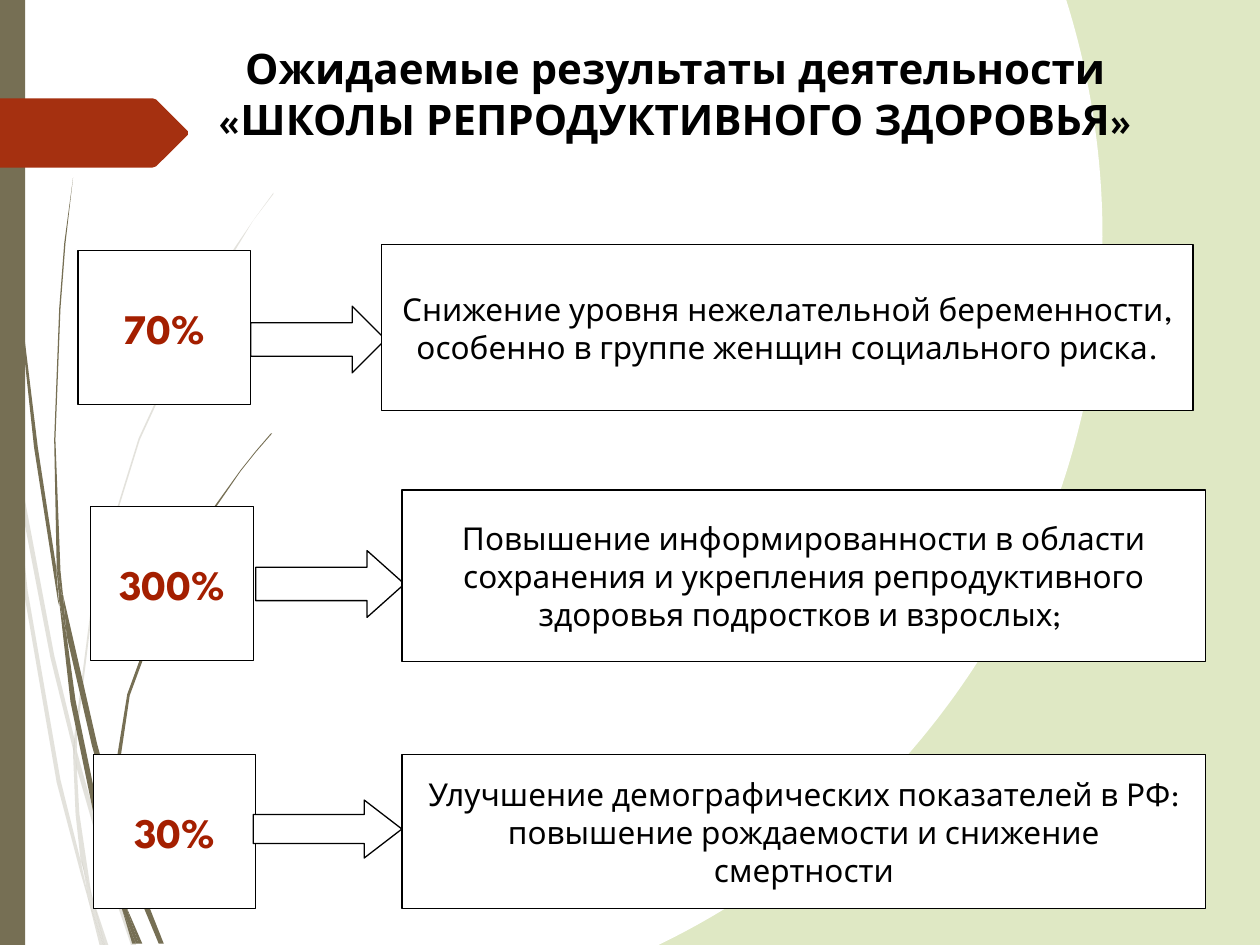
from lxml import etree
from pptx import Presentation
from pptx.dml.color import RGBColor
from pptx.enum.shapes import MSO_SHAPE
from pptx.enum.text import MSO_ANCHOR, PP_ALIGN
from pptx.oxml import parse_xml
from pptx.oxml.ns import nsdecls, qn
from pptx.util import Inches, Pt

RECTANGLE, ARROW = MSO_SHAPE.RECTANGLE, MSO_SHAPE.RIGHT_ARROW
CENTER, TOP, MIDDLE = PP_ALIGN.CENTER, MSO_ANCHOR.TOP, MSO_ANCHOR.MIDDLE
OLIVE = RGBColor(0x76, 0x6F, 0x54)
RUST = RGBColor(0xA5, 0x30, 0x10)
RED = RGBColor(0xA4, 0x1F, 0x00)
BLACK = RGBColor(0, 0, 0)
WHITE = RGBColor(0xFF, 0xFF, 0xFF)
FONT = "League Spartan"
HUNDREDTH = Inches(0.01)

# Outlines of the grass blades, in hundredths of an inch
PALE_BLADES = [
    [(8, 350), (6, 322), (0, 282), (0, 299), (7, 344)],
    [(40, 522), (59, 599), (59, 586), (43, 520), (10, 345), (12, 376)],
    [(64, 607), (61, 596), (61, 610), (85, 694), (104, 750), (108, 750), (88, 692)],
    [(83, 750), (86, 750), (73, 711)],
    [(64, 683), (48, 619), (22, 469), (12, 376), (8, 350), (19, 470), (45, 621),
     (64, 693), (70, 714), (69, 707)],
    [(58, 599), (60, 646), (64, 683), (67, 692), (73, 711), (72, 706), (63, 646),
     (61, 610), (61, 608)],
    [(61, 584), (76, 462), (111, 349), (159, 245), (187, 198), (201, 175), (217, 154),
     (217, 153), (201, 175), (186, 197), (158, 244), (110, 348), (75, 461), (59, 584),
     (59, 586), (61, 596)],
    [(70, 714), (79, 750), (82, 750)],
    [(61, 608), (61, 610), (61, 596), (59, 586), (58, 599)],
    [(67, 692), (65, 683), (69, 707), (70, 714), (82, 750), (83, 750), (73, 711)],
]
DARK_BLADES = [
    [(5, 110), (14, 233), (27, 355), (46, 477), (47, 481), (45, 457), (45, 453),
     (30, 355), (15, 232), (6, 109), (4, 48), (3, 0), (2, 0), (3, 48)],
    [(73, 592), (88, 645), (88, 633), (88, 631), (77, 590), (50, 472), (53, 505)],
    [(94, 649), (91, 641), (91, 656), (109, 708), (126, 749), (130, 749), (113, 706)],
    [(91, 691), (81, 657), (60, 556), (53, 505), (47, 477), (56, 557), (77, 659),
     (92, 708), (97, 722), (96, 717)],
    [(50, 472), (48, 453), (44, 349), (48, 245), (52, 193), (58, 141), (51, 193),
     (47, 245), (43, 349), (45, 449), (49, 472)],
    [(110, 749), (113, 749), (100, 719)],
    [(47, 477), (53, 505), (50, 472), (49, 472), (45, 449), (45, 453)],
    [(91, 633), (103, 552), (131, 476), (169, 406), (191, 374), (203, 359), (216, 344),
     (215, 344), (203, 358), (191, 373), (168, 405), (129, 474), (101, 551), (88, 631),
     (91, 641)],
    [(97, 722), (105, 749), (108, 749)],
    [(96, 706), (91, 691), (96, 717), (97, 722), (108, 749), (110, 749), (100, 719)],
]
TITLE_TAG = [(149, 107), (124, 132), (121, 133), (0, 133), (0, 78), (121, 78),
             (124, 79), (149, 104)]

# Each row: share, its box, arrow box and head length, outcome, its box (inches)
RESULTS = [
    ("70%", (0.62, 1.99, 1.37, 1.22), (1.99, 2.43, 1.07, 0.53), 0.5,
     "Снижение уровня нежелательной беременности, особенно в группе женщин "
     "социального риска.", (3.03, 1.94, 6.44, 1.32)),
    ("300%", (0.72, 4.02, 1.29, 1.22), (2.03, 4.37, 1.18, 0.53), 0.56,
     "Повышение информированности в области сохранения и укрепления "
     "репродуктивного здоровья подростков и взрослых; ", (3.19, 3.89, 6.38, 1.36)),
    ("30%", (0.74, 5.99, 1.29, 1.22), (2.01, 6.35, 1.18, 0.46), 0.65,
     "Улучшение демографических показателей в РФ: повышение рождаемости и "
     "снижение смертности", (3.19, 5.99, 6.38, 1.22)),
]


def add_outline(shapes, points, color):
    builder = shapes.build_freeform(*points[0], scale=HUNDREDTH)
    builder.add_line_segments(points[1:], close=True)
    outline = builder.convert_to_shape()
    outline.shadow.inherit = False
    outline.fill.solid()
    outline.fill.fore_color.rgb = color
    outline.line.fill.background()
    return outline


def write(frame, text, size, color, bold, anchor):
    frame.word_wrap = True
    frame.vertical_anchor = anchor
    paragraph = frame.paragraphs[0]
    paragraph.alignment = CENTER
    run = paragraph.add_run()
    run.text = text
    run.font.name = FONT
    run.font.size = Pt(size)
    run.font.bold = bold
    run.font.color.rgb = color


deck = Presentation()
deck.slide_width, deck.slide_height = Inches(10), Inches(7.5)
slide = deck.slides.add_slide(deck.slide_layouts[5])
shapes = slide.shapes

# Background: a hard-edged white circle on pale green
slide.background.fill.gradient()
gradient = slide.background._cSld.find(".//" + qn("a:gradFill"))
gradient.getparent().replace(gradient, parse_xml(
    f'<a:gradFill {nsdecls("a")} rotWithShape="1"><a:gsLst>'
    '<a:gs pos="100000"><a:srgbClr val="FFFFFF"/></a:gs>'
    '<a:gs pos="100000"><a:srgbClr val="DFE8C4"/></a:gs></a:gsLst>'
    '<a:path path="circle"><a:fillToRect l="50000" t="50000" r="100000" b="100000"/>'
    '</a:path></a:gradFill>'))

# Grass, side bar and title tag
pale_grass = shapes.add_group_shape()
for blade in PALE_BLADES:
    leaf = add_outline(pale_grass.shapes, blade, OLIVE)
    tint = leaf._element.spPr.find(".//" + qn("a:srgbClr"))
    etree.SubElement(tint, qn("a:alpha"), val="20000")
dark_grass = shapes.add_group_shape()
for blade in DARK_BLADES:
    add_outline(dark_grass.shapes, blade, OLIVE)

side_bar = shapes.add_shape(RECTANGLE, 0, 0, Inches(0.2), deck.slide_height)
side_bar.shadow.inherit = False
side_bar.fill.solid()
side_bar.fill.fore_color.rgb = OLIVE
side_bar.line.fill.background()
add_outline(shapes, TITLE_TAG, RUST)

heading = shapes.title
heading.left, heading.top, heading.width, heading.height = map(
    Inches, (1.38, 0.29, 7.96, 1.2))
write(heading.text_frame,
      "Ожидаемые результаты деятельности «ШКОЛЫ РЕПРОДУКТИВНОГО ЗДОРОВЬЯ»",
      24, BLACK, True, TOP)

# Expected results: share, arrow, outcome
for share, share_box, arrow_box, head, outcome, outcome_box in RESULTS:
    for kind, box, text, size, color, bold in (
        (RECTANGLE, share_box, share, 24, RED, True),
        (ARROW, arrow_box, None, None, None, None),
        (RECTANGLE, outcome_box, outcome, 18, BLACK, False),
    ):
        part = shapes.add_shape(kind, *map(Inches, box))
        part.shadow.inherit = False
        part.fill.solid()
        part.fill.fore_color.rgb = WHITE
        part.line.color.rgb = BLACK
        part.line.width = Pt(0.75)
        if text:
            write(part.text_frame, text, size, color, bold, MIDDLE)
        else:
            part.adjustments[1] = head

deck.save("out.pptx")
